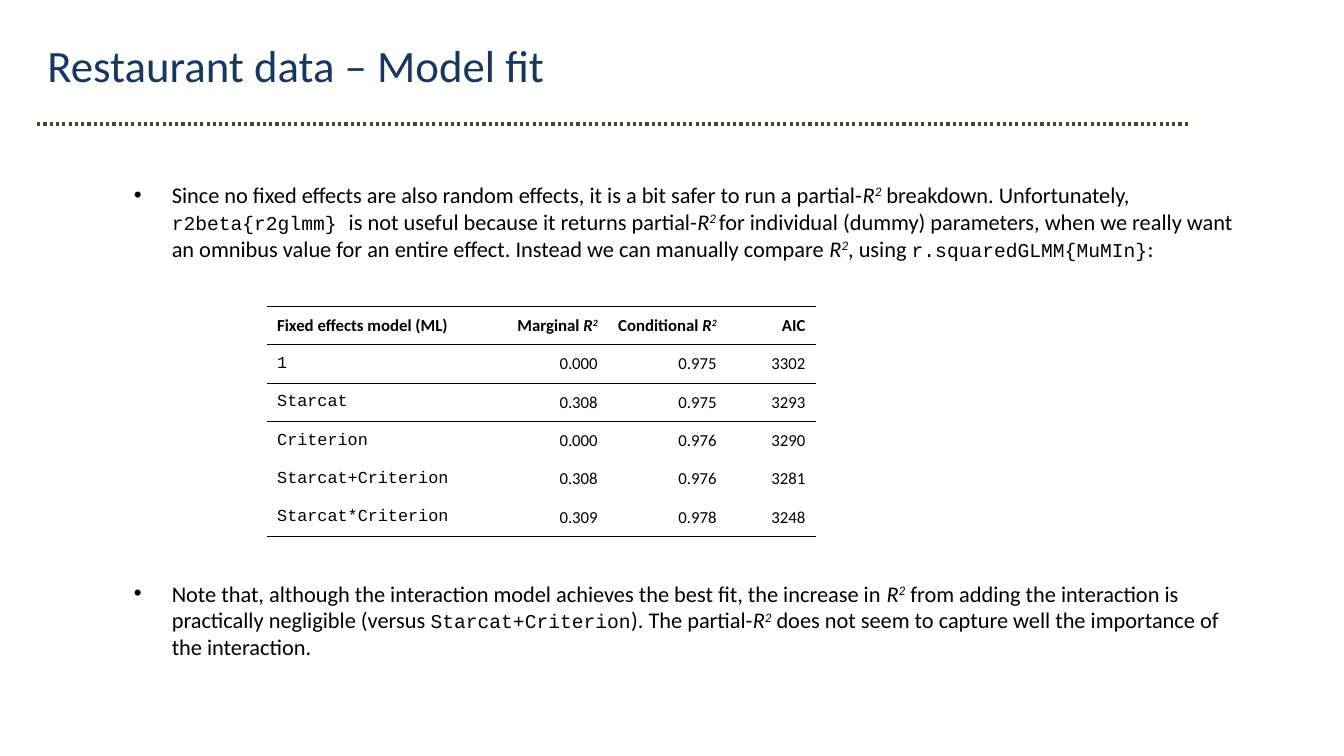
"""Build the slide on model fit for the restaurant data."""
from lxml.etree import SubElement
from pptx import Presentation
from pptx.dml.color import RGBColor
from pptx.enum.dml import MSO_LINE
from pptx.enum.shapes import MSO_CONNECTOR
from pptx.enum.text import MSO_ANCHOR, PP_ALIGN
from pptx.oxml.ns import qn
from pptx.util import Pt

COLORS = {"title": "17375E", "rule": "4A452A", "text": "000000"}
BODY_FONT, CODE_FONT = "Calibri", "Courier New"
NO_TABLE_STYLE = "{2D5ABB26-0587-4C30-8999-92F81FD0307C}"
R_SQUARED = [("R", {"italic": True}), ("2", {"italic": True, "raised": True})]
CODE = {"font": CODE_FONT, "size": 14}

BREAKDOWN = [
    ("Since no fixed effects are also random effects, it is a bit safer to run a partial-", {}),
    *R_SQUARED,
    (" breakdown. Unfortunately, ", {}),
    ("r2beta{r2glmm} ", CODE),
    ("is not useful because it returns partial-", {}),
    R_SQUARED[0],
    ("2 ", R_SQUARED[1][1]),
    ("for individual (dummy) parameters, when we really want an omnibus value "
     "for an entire effect. Instead we can manually compare ", {}),
    *R_SQUARED,
    (", using ", {}),
    ("r.squaredGLMM{MuMIn}", CODE),
    (":", {}),
]
CONCLUSION = [
    ("Note that, although the interaction model achieves the best fit, the increase in ", {}),
    *R_SQUARED,
    (" from adding the interaction is practically negligible (versus ", {}),
    ("Starcat+Criterion", CODE),
    ("). The partial-", {}),
    *R_SQUARED,
    (" does not seem to capture well the importance of the interaction.", {}),
]
HEADINGS = [
    [("Fixed effects model (ML)", {})],
    [("Marginal ", {}), *R_SQUARED],
    [("Conditional ", {}), *R_SQUARED],
    [("AIC", {})],
]
MODELS = [
    ("1", "0.000", "0.975", "3302"),
    ("Starcat", "0.308", "0.975", "3293"),
    ("Criterion", "0.000", "0.976", "3290"),
    ("Starcat+Criterion", "0.308", "0.976", "3281"),
    ("Starcat*Criterion", "0.309", "0.978", "3248"),
]
COLUMN_WIDTHS = (158.4, 85, 85, 63.4)
ROW_HEIGHT = 27.4
RULED_ROWS = (0, 1, len(MODELS))


def add_span(para, text, font=BODY_FONT, size=16, color="text",
             bold=False, italic=False, raised=False):
    """Add text to a paragraph in the given format."""
    span = para.add_run()
    span.text = text
    span.font.name = font
    span.font.size = Pt(size)
    span.font.bold = bold
    span.font.italic = italic
    span.font.color.rgb = RGBColor.from_string(COLORS[color])
    if raised:
        span.font._element.set("baseline", "30000")


def add_spans(para, spans, **common):
    """Add a list of text and format pairs that share a common format."""
    for text, style in spans:
        add_span(para, text, **{**common, **style})


def add_title(page, text):
    """Place and fill the title placeholder."""
    title = page.shapes.title
    title.left, title.top, title.width, title.height = Pt(26.6), Pt(23), Pt(839), Pt(46)
    title.text_frame.vertical_anchor = MSO_ANCHOR.MIDDLE
    para = title.text_frame.paragraphs[0]
    para.alignment = PP_ALIGN.LEFT
    add_span(para, text, size=32, color="title")


def add_rule(page):
    """Draw the dotted rule below the title."""
    rule = page.shapes.add_connector(
        MSO_CONNECTOR.STRAIGHT, Pt(26.6), Pt(88.6), Pt(848.5), Pt(88.6))
    rule.line.color.rgb = RGBColor.from_string(COLORS["rule"])
    rule.line.width = Pt(2.25)
    rule.line.dash_style = MSO_LINE.ROUND_DOT
    SubElement(rule._element.spPr, qn("a:effectLst"))


def format_bullet(para):
    """Give a paragraph a bullet and a hanging indent."""
    properties = para._p.get_or_add_pPr()
    properties.set("marL", str(Pt(27)))
    properties.set("indent", str(Pt(-27)))
    SubElement(properties, qn("a:buFont"), typeface="Arial")
    SubElement(properties, qn("a:buChar"), char="•")


def add_body(page):
    """Add both bullets, leaving room for the table between them."""
    box = page.shapes.add_textbox(Pt(88.6), Pt(126), Pt(805), Pt(388))
    frame = box.text_frame
    frame.word_wrap = True
    first, second = frame.paragraphs[0], frame.add_paragraph()
    second.space_before = Pt(227)
    for para, spans in ((first, BREAKDOWN), (second, CONCLUSION)):
        format_bullet(para)
        add_spans(para, spans)


def add_border(cell, side):
    """Draw a thin line on one side of a cell."""
    line = SubElement(cell._tc.get_or_add_tcPr(), qn(f"a:{side}"), w=str(Pt(1)))
    fill = SubElement(line, qn("a:solidFill"))
    SubElement(fill, qn("a:srgbClr"), val=COLORS["text"])


def fill_cell(cell, spans, row, column):
    """Write a table cell with its alignment and rules."""
    cell.vertical_anchor = MSO_ANCHOR.MIDDLE
    para = cell.text_frame.paragraphs[0]
    para.alignment = PP_ALIGN.RIGHT if column else PP_ALIGN.LEFT
    font = CODE_FONT if row and not column else BODY_FONT
    add_spans(para, spans, font=font, size=12, bold=row == 0)
    if row == 0 or row - 1 in RULED_ROWS:
        add_border(cell, "lnT")
    if row in RULED_ROWS:
        add_border(cell, "lnB")
    cell.fill.background()


def add_fit_table(page):
    """Add the table of fit values by model."""
    rows = [HEADINGS] + [[[(value, {})] for value in model] for model in MODELS]
    table = page.shapes.add_table(
        len(rows), len(COLUMN_WIDTHS), Pt(190.8), Pt(218.9),
        Pt(sum(COLUMN_WIDTHS)), Pt(ROW_HEIGHT * len(rows))).table
    table.first_row = table.horz_banding = False
    table._tbl.tblPr.find(qn("a:tableStyleId")).text = NO_TABLE_STYLE
    for column, width in zip(table.columns, COLUMN_WIDTHS):
        column.width = Pt(width)
    for row, contents in enumerate(rows):
        table.rows[row].height = Pt(ROW_HEIGHT)
        for column, spans in enumerate(contents):
            fill_cell(table.cell(row, column), spans, row, column)


def main():
    """Build and save the deck."""
    deck = Presentation()
    deck.slide_width, deck.slide_height = Pt(960), Pt(540)
    page = deck.slides.add_slide(deck.slide_layouts[5])
    add_body(page)
    add_title(page, "Restaurant data – Model fit")
    add_rule(page)
    add_fit_table(page)
    deck.save("out.pptx")


if __name__ == "__main__":
    main()
